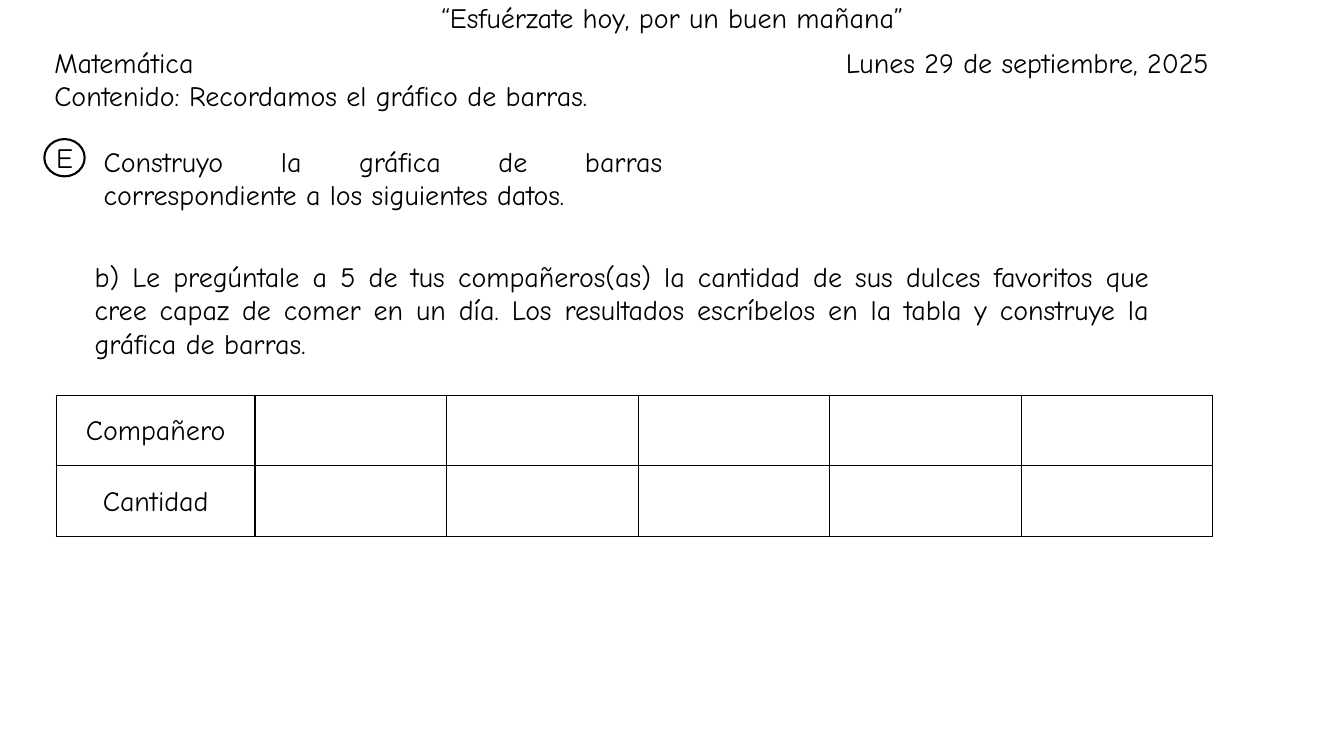
from pptx import Presentation
from pptx.dml.color import RGBColor
from pptx.enum.shapes import MSO_SHAPE
from pptx.enum.text import MSO_ANCHOR, PP_ALIGN
from pptx.oxml import parse_xml
from pptx.oxml.ns import nsdecls
from pptx.util import Pt

PX = 9144
FONT = "Comic Neue"
SIZE = 20
COLORS = {"ink": "000000", "paper": "FFFFFF"}
CENTER, JUSTIFY = PP_ALIGN.CENTER, PP_ALIGN.JUSTIFY

TEXTS = [
    ((398, -4, 538, 77), CENTER, ["“Esfuérzate hoy, por un buen mañana”"]),
    ((44, 40, 874, 77), JUSTIFY,
     ["Matemática", "Contenido: Recordamos el gráfico de barras."]),
    ((829, 40, 492, 44), JUSTIFY, ["Lunes 29 de septiembre, 2025"]),
    ((93, 138, 574, 111), JUSTIFY,
     ["Construyo la gráfica de barras correspondiente a los siguientes datos."]),
    ((84, 252, 1066, 111), JUSTIFY,
     ["b) Le pregúntale a 5 de tus compañeros(as) la cantidad de sus dulces "
      "favoritos que cree capaz de comer en un día. Los resultados escríbelos "
      "en la tabla y construye la gráfica de barras."]),
]
BADGE = ((44, 138, 40, 37), "E")
LABELS = ["Compañero", "Cantidad"]
GRID = (56, 392)
WIDTHS = [197] + [190] * 5
ROW = 70


def color(name):
    return RGBColor.from_string(COLORS[name])


def scale(box):
    return [n * PX for n in box]


def write(frame, lines, align):
    frame.text = "\n".join(lines)
    for para in frame.paragraphs:
        para.alignment = align
        for run in para.runs:
            run.font.name = FONT
            run.font.size = Pt(SIZE)
            run.font.color.rgb = color("ink")


def pad(item, side):
    item.margin_left = item.margin_right = side * PX
    item.margin_top = item.margin_bottom = 0
    item.vertical_anchor = MSO_ANCHOR.MIDDLE


def border(cell):
    props = cell._tc.get_or_add_tcPr()
    for spot, side in enumerate(("lnL", "lnR", "lnT", "lnB")):
        props.insert(spot, parse_xml(
            f'<a:{side} {nsdecls("a")} w="{Pt(1)}"><a:solidFill>'
            f'<a:srgbClr val="{COLORS["ink"]}"/></a:solidFill></a:{side}>'))


def add_text(slide, box, align, lines):
    frame = slide.shapes.add_textbox(*scale(box)).text_frame
    frame.word_wrap = True
    write(frame, lines, align)


def add_badge(slide, box, letter):
    badge = slide.shapes.add_shape(MSO_SHAPE.OVAL, *scale(box))
    badge.shadow.inherit = False
    badge.fill.background()
    badge.line.color.rgb = color("ink")
    badge.line.width = Pt(1.5)
    pad(badge.text_frame, 0)
    write(badge.text_frame, [letter], CENTER)


def add_grid(slide):
    box = (*GRID, sum(WIDTHS), ROW * len(LABELS))
    table = slide.shapes.add_table(len(LABELS), len(WIDTHS), *scale(box)).table
    table.first_row = table.horz_banding = False
    for column, width in zip(table.columns, WIDTHS):
        column.width = width * PX
    for row, label in zip(table.rows, LABELS):
        row.height = ROW * PX
        for cell in row.cells:
            cell.fill.background()
            border(cell)
        head = row.cells[0]
        pad(head, 7)
        write(head.text_frame, [label], CENTER)
        para = head.text_frame.paragraphs[0]
        para.line_spacing = 1.07
        para.space_after = Pt(6)


def main():
    deck = Presentation()
    deck.slide_width, deck.slide_height = scale((1333, 750))
    slide = deck.slides.add_slide(deck.slide_layouts[6])
    slide.background.fill.solid()
    slide.background.fill.fore_color.rgb = color("paper")
    for text in TEXTS:
        add_text(slide, *text)
    add_badge(slide, *BADGE)
    add_grid(slide)
    deck.save("out.pptx")


if __name__ == "__main__":
    main()
